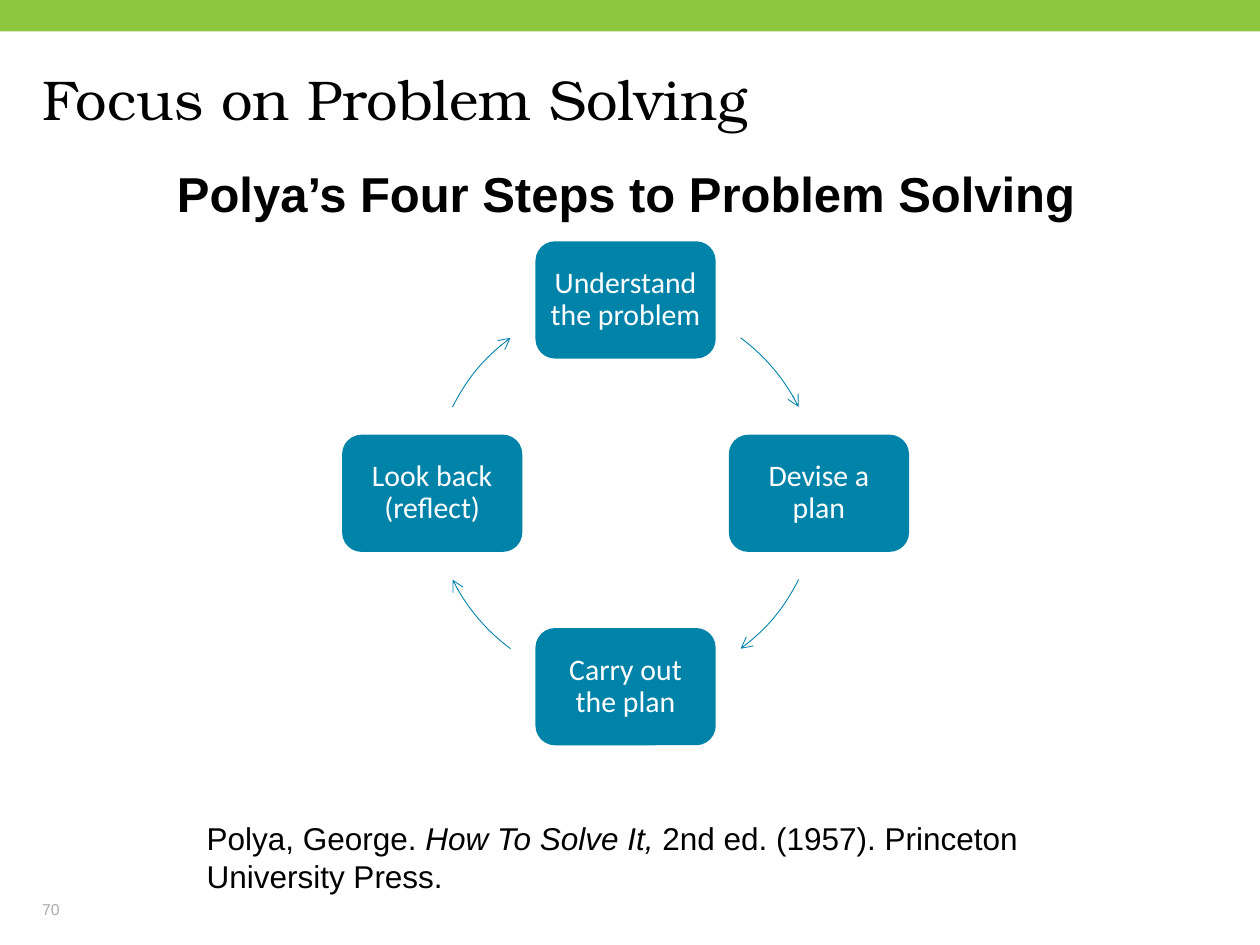
import math

import lxml.etree
import pptx
import pptx.dml.color
import pptx.enum.shapes
import pptx.enum.text
import pptx.oxml.ns
import pptx.util

Pt = pptx.util.Pt
Shape = pptx.enum.shapes.MSO_SHAPE
Align = pptx.enum.text.PP_ALIGN
Anchor = pptx.enum.text.MSO_ANCHOR

GREEN = pptx.dml.color.RGBColor(0x8D, 0xC6, 0x3F)
TEAL = pptx.dml.color.RGBColor(0x00, 0x83, 0xA9)
BLACK = pptx.dml.color.RGBColor(0x00, 0x00, 0x00)
WHITE = pptx.dml.color.RGBColor(0xFF, 0xFF, 0xFF)
GRAY = pptx.dml.color.RGBColor(0xAF, 0xAB, 0xAB)

STEPS = ["Understand the problem", "Devise a plan", "Carry out the plan", "Look back (reflect)"]
CENTER_X, CENTER_Y, RADIUS = 357.5, 281.9, 110.5
STEP_WIDTH, STEP_HEIGHT = 103, 67
ARC_STARTS = [306.5, 26.5, 126.5, 206.5]
ARC_SWEEP = 27


def write_text(box, *parts, size, font="Arial", color=BLACK, bold=False, align=Align.LEFT,
               anchor=Anchor.TOP, spacing=1.0, margins=(0, 0)):
    frame = box.text_frame
    frame.word_wrap = True
    frame.vertical_anchor = anchor
    frame.margin_left = frame.margin_right = Pt(margins[0])
    frame.margin_top = frame.margin_bottom = Pt(margins[1])
    para = frame.paragraphs[0]
    para.alignment = align
    para.line_spacing = spacing
    for text, italic in parts:
        span = para.add_run()
        span.text = text
        span.font.name = font
        span.font.size = Pt(size)
        span.font.color.rgb = color
        span.font.bold = bold
        span.font.italic = italic


def add_text(page, left, top, width, height, *parts, **text_format):
    box = page.shapes.add_textbox(Pt(left), Pt(top), Pt(width), Pt(height))
    write_text(box, *parts, **text_format)


def add_block(page, kind, left, top, width, height, color):
    block = page.shapes.add_shape(kind, Pt(left), Pt(top), Pt(width), Pt(height))
    block.shadow.inherit = False
    block.fill.solid()
    block.fill.fore_color.rgb = color
    block.line.fill.background()
    return block


def add_step(page, label, angle):
    middle_x = CENTER_X + RADIUS * math.cos(angle)
    middle_y = CENTER_Y + RADIUS * math.sin(angle)
    block = add_block(page, Shape.ROUNDED_RECTANGLE, middle_x - STEP_WIDTH / 2,
                      middle_y - STEP_HEIGHT / 2, STEP_WIDTH, STEP_HEIGHT, TEAL)
    write_text(block, (label, False), size=17, font="Calibri", color=WHITE,
               align=Align.CENTER, anchor=Anchor.MIDDLE, spacing=0.9, margins=(5, 5))


def add_arc_arrow(page, start):
    arc = page.shapes.add_shape(Shape.ARC, Pt(CENTER_X - RADIUS), Pt(CENTER_Y - RADIUS),
                                Pt(2 * RADIUS), Pt(2 * RADIUS))
    arc.shadow.inherit = False
    arc.fill.background()
    arc.adjustments[0] = start * 0.6
    arc.adjustments[1] = (start + ARC_SWEEP) * 0.6
    arc.line.color.rgb = TEAL
    arc.line.width = Pt(0.5)
    line = arc.line._get_or_add_ln()
    lxml.etree.SubElement(line, pptx.oxml.ns.qn("a:tailEnd"), type="arrow")


def main():
    deck = pptx.Presentation()
    deck.slide_width, deck.slide_height = Pt(720), Pt(540)
    page = deck.slides.add_slide(deck.slide_layouts[6])

    add_block(page, Shape.RECTANGLE, 0, 0, 720, 18, GREEN)
    add_text(page, 24, 41, 694, 91, ("Focus on Problem Solving", False),
             size=32, font="TeX Gyre Bonum", spacing=0.9)
    add_text(page, 24, 507.5, 162, 17.5, ("70", False),
             size=9, color=GRAY, anchor=Anchor.BOTTOM)
    add_text(page, 44.5, 93.6, 626.5, 319, ("Polya’s Four Steps to Problem Solving", False),
             size=28, bold=True, align=Align.CENTER, spacing=0.9, margins=(7.2, 3.6))
    add_text(page, 111, 464.5, 498, 51, ("Polya, George. ", False), ("How To Solve It, ", True),
             ("2nd ed. (1957). Princeton University Press.", False),
             size=18, margins=(7.2, 3.6))

    for index, (label, start) in enumerate(zip(STEPS, ARC_STARTS)):
        add_step(page, label, math.radians(90 * index - 90))
        add_arc_arrow(page, start)

    deck.save("out.pptx")


if __name__ == "__main__":
    main()
